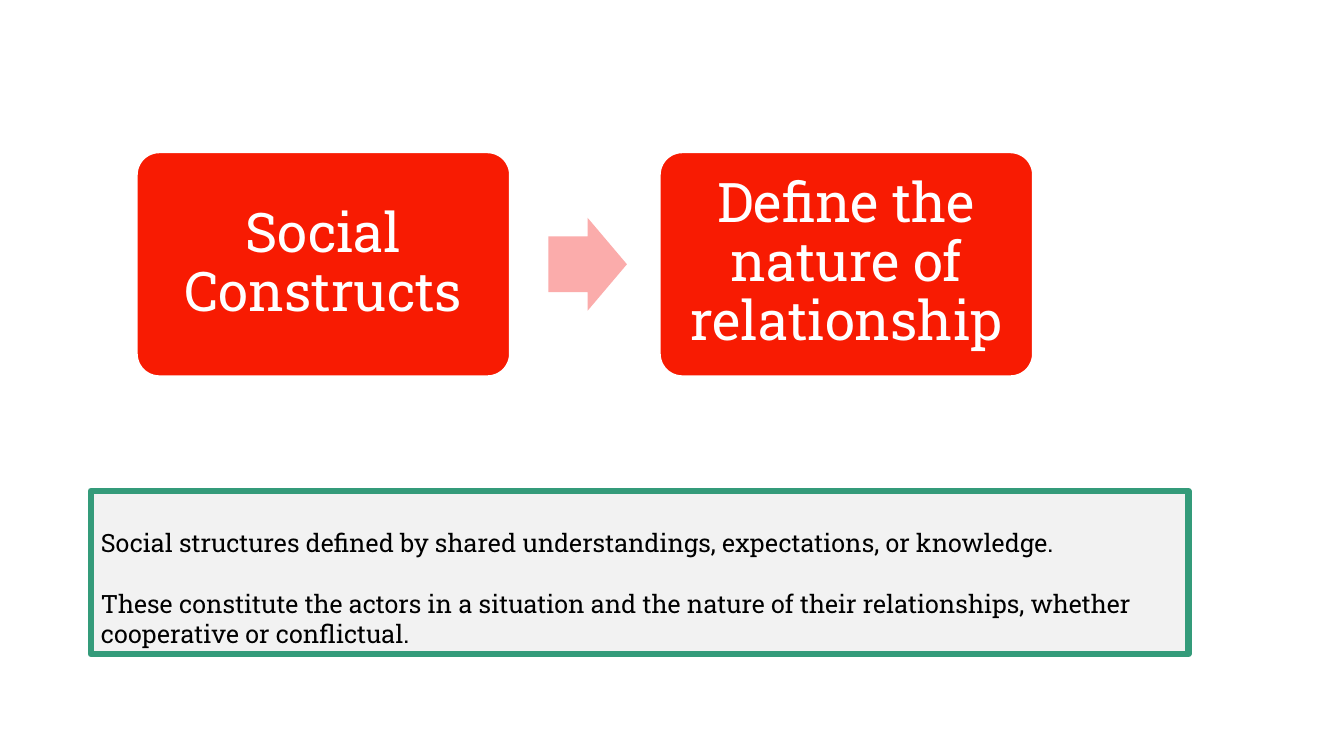
"""Builds a slide on how social constructs define relationships."""
from dataclasses import dataclass
from typing import Optional

from pptx import Presentation
from pptx.dml.color import RGBColor
from pptx.enum.shapes import MSO_SHAPE
from pptx.enum.text import MSO_ANCHOR, PP_ALIGN
from pptx.util import Cm, Pt

RECT, ROUNDED, ARROW = MSO_SHAPE.RECTANGLE, MSO_SHAPE.ROUNDED_RECTANGLE, MSO_SHAPE.RIGHT_ARROW
LEFT, CENTER = PP_ALIGN.LEFT, PP_ALIGN.CENTER
MIDDLE, BOTTOM = MSO_ANCHOR.MIDDLE, MSO_ANCHOR.BOTTOM

RED = RGBColor(0xF8, 0x1B, 0x02)
PINK = RGBColor(0xFB, 0xAC, 0xAB)
GREEN = RGBColor(0x34, 0x9B, 0x7A)
GREY = RGBColor(0xF2, 0xF2, 0xF2)
WHITE = RGBColor(0xFF, 0xFF, 0xFF)
BLACK = RGBColor(0x00, 0x00, 0x00)
FONT = "Roboto Slab"

STEP_LEFT, STEP_TOP, STEP_W, STEP_H, STEP_PITCH = 3.45, 3.84, 9.4, 5.64, 13.18
ARROW_W, ARROW_H = 1.98, 2.34
STEPS = ("Social Constructs", "Define the nature of relationship")
NOTES = (
    "Social structures defined by shared understandings, expectations, or knowledge.",
    "These constitute the actors in a situation and the nature of their relationships, "
    "whether cooperative or conflictual.",
)


@dataclass(frozen=True)
class Block:
    kind: MSO_SHAPE
    left: float
    top: float
    width: float
    height: float
    fill: RGBColor
    line: Optional[RGBColor] = None
    line_width: float = 0
    adjustments: tuple[float, ...] = ()


@dataclass(frozen=True)
class TextStyle:
    size: float
    color: RGBColor
    align: PP_ALIGN
    anchor: MSO_ANCHOR
    margin_x: float
    margin_y: float
    line_spacing: float = 1.0
    gap: float = 0


STEP_STYLE = TextStyle(39, WHITE, CENTER, MIDDLE, 0.41, 0.41, line_spacing=0.9)
NOTE_STYLE = TextStyle(18, BLACK, LEFT, BOTTOM, 0.25, 0.13, gap=22)


def add_block(s, block: Block):
    """Draw a filled block and return its shape."""
    sp = s.shapes.add_shape(block.kind, Cm(block.left), Cm(block.top), Cm(block.width), Cm(block.height))
    sp.shadow.inherit = False
    for i, value in enumerate(block.adjustments):
        sp.adjustments[i] = value
    sp.fill.solid()
    sp.fill.fore_color.rgb = block.fill
    if block.line is None:
        sp.line.fill.background()
    else:
        sp.line.color.rgb = block.line
        sp.line.width = Pt(block.line_width)
    return sp


def add_text(sp, paragraphs: tuple[str, ...], style: TextStyle) -> None:
    """Write formatted paragraphs into a shape."""
    tf = sp.text_frame
    frame_format = {
        "word_wrap": True, "vertical_anchor": style.anchor,
        "margin_left": Cm(style.margin_x), "margin_right": Cm(style.margin_x),
        "margin_top": Cm(style.margin_y), "margin_bottom": Cm(style.margin_y),
    }
    for name, value in frame_format.items():
        setattr(tf, name, value)
    for i, text in enumerate(paragraphs):
        p = tf.add_paragraph() if i else tf.paragraphs[0]
        p.alignment = style.align
        p.line_spacing = style.line_spacing
        p.space_before = Pt(style.gap if i else 0)
        r = p.add_run()
        r.text = text
        for name, value in {"name": FONT, "size": Pt(style.size)}.items():
            setattr(r.font, name, value)
        r.font.color.rgb = style.color


def main() -> None:
    """Build and save the slide."""
    prs = Presentation()
    prs.slide_width, prs.slide_height = Cm(33.87), Cm(19.05)
    s = prs.slides.add_slide(prs.slide_layouts[6])

    note = Block(RECT, 2.29, 12.37, 27.66, 4.11, GREY, GREEN, 4.5)
    add_text(add_block(s, note), NOTES, NOTE_STYLE)

    for i, text in enumerate(STEPS):
        step = Block(ROUNDED, STEP_LEFT + i * STEP_PITCH, STEP_TOP, STEP_W, STEP_H, RED, WHITE, 1.25, (0.1,))
        add_text(add_block(s, step), (text,), STEP_STYLE)

    arrow_left = STEP_LEFT + (STEP_W + STEP_PITCH - ARROW_W) / 2 + 0.07
    arrow_top = STEP_TOP + (STEP_H - ARROW_H) / 2
    add_block(s, Block(ARROW, arrow_left, arrow_top, ARROW_W, ARROW_H, PINK, adjustments=(0.6, 0.5)))

    prs.save("out.pptx")


if __name__ == "__main__":
    main()
